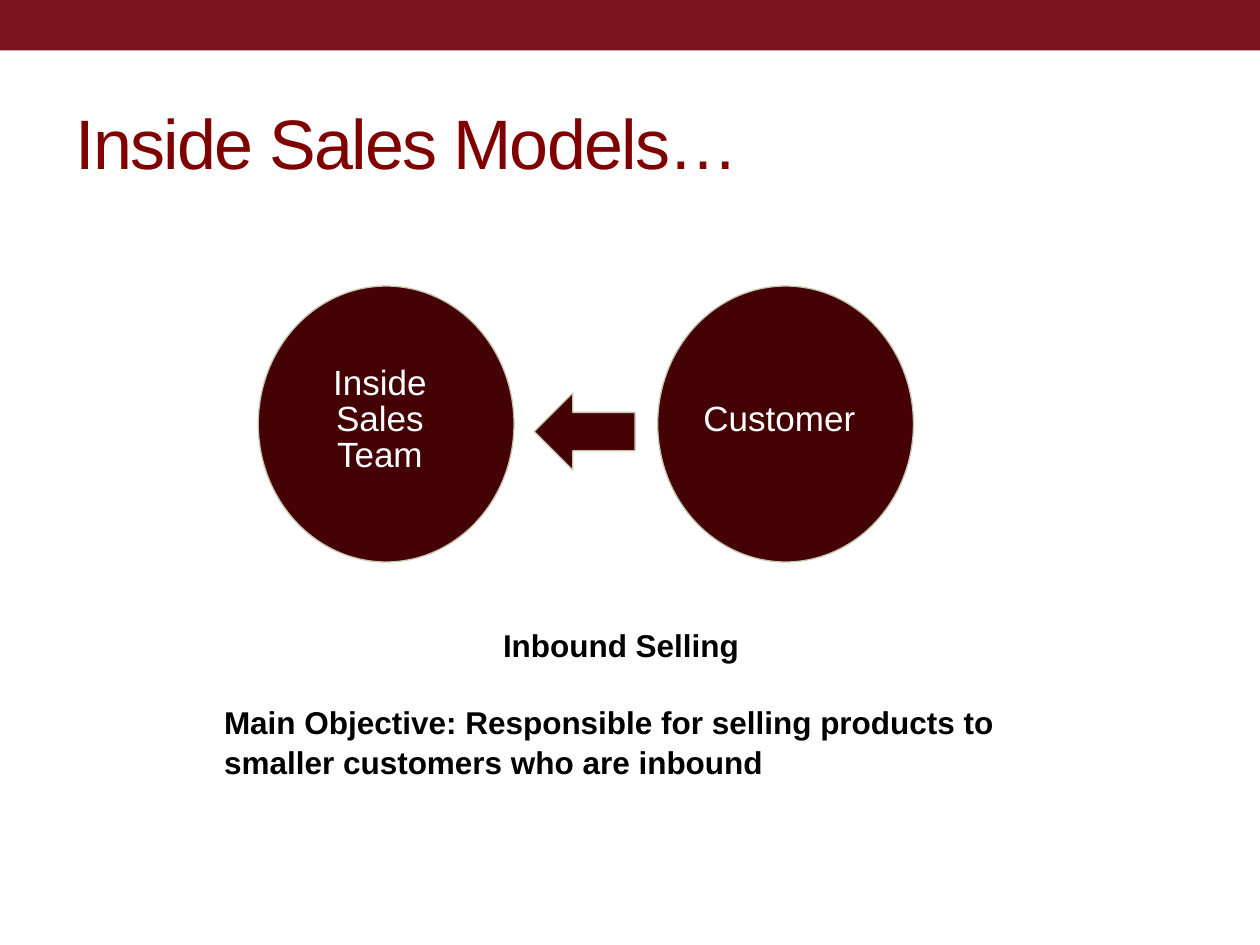
"""Build the inside sales models slide, showing inbound selling."""
from pptx import Presentation
from pptx.dml.color import RGBColor
from pptx.enum.shapes import MSO_SHAPE
from pptx.enum.text import MSO_ANCHOR, PP_ALIGN
from pptx.util import Inches, Pt

RECT, OVAL, ARROW = MSO_SHAPE.RECTANGLE, MSO_SHAPE.OVAL, MSO_SHAPE.RIGHT_ARROW
MIDDLE = MSO_ANCHOR.MIDDLE
LEFT, CENTER = PP_ALIGN.LEFT, PP_ALIGN.CENTER

TITLE = "Inside Sales Models…"
PARTIES = ["Inside Sales Team", "Customer"]
SUMMARY = [
    ("Inbound Selling", CENTER),
    ("Main Objective: Responsible for selling products to smaller customers who are inbound", LEFT),
]

THEME = {
    "font": "Arial",
    "band": "7A141C", "title": "800000", "node": "450205",
    "outline": "C8C8B1", "light": "FFFFFF", "dark": "000000",
    "title_size": 40, "node_size": 20, "body_size": 18,
}
SLIDE_W, SLIDE_H = 10, 7.5
NODE_X, NODE_Y, NODE_W, NODE_H, NODE_STEP = 2.05, 2.27, 2.03, 2.19, 3.17
ARROW_BOX = (4.24, 3.12, 0.8, 0.61)


def color(name):
    return RGBColor.from_string(THEME[name])


def add_shape(s, kind, box, fill, outline=None):
    sp = s.shapes.add_shape(kind, *map(Inches, box))
    sp.shadow.inherit = False
    sp.fill.solid()
    sp.fill.fore_color.rgb = color(fill)
    if outline:
        sp.line.color.rgb = color(outline)
        sp.line.width = Pt(0.75)
    else:
        sp.line.fill.background()
    return sp


def add_run(p, text, role, ink, bold=False):
    r = p.add_run()
    r.text = text
    r.font.name = THEME["font"]
    r.font.size = Pt(THEME[role])
    r.font.bold = bold
    r.font.color.rgb = color(ink)
    return r


def add_title(s):
    sp = s.shapes.title
    sp.left, sp.top, sp.width, sp.height = map(Inches, (0.5, 0.58, 9, 1.08))
    tf = sp.text_frame
    tf.vertical_anchor = MIDDLE
    p = tf.paragraphs[0]
    p.alignment = LEFT
    r = add_run(p, TITLE, "title_size", "title")
    r.font._element.set("spc", "-100")


def add_party(s, index, name):
    box = (NODE_X + index * NODE_STEP, NODE_Y, NODE_W, NODE_H)
    tf = add_shape(s, OVAL, box, "node", "outline").text_frame
    tf.word_wrap = True
    tf.vertical_anchor = MIDDLE
    tf.margin_left = tf.margin_top = 0
    tf.margin_right, tf.margin_bottom = Inches(0.1), Inches(0.05)
    p = tf.paragraphs[0]
    p.alignment = CENTER
    p.line_spacing = 0.86
    add_run(p, name, "node_size", "light")


def add_summary(s):
    tf = s.shapes.add_textbox(*map(Inches, (1.68, 4.91, 6.5, 1.31))).text_frame
    tf.word_wrap = True
    for i, (text, alignment) in enumerate(SUMMARY):
        p = tf.add_paragraph() if i else tf.paragraphs[0]
        p.alignment = alignment
        p.line_spacing = 1.04
        p.space_before = Pt(21.5 if i else 0)
        add_run(p, text, "body_size", "dark", bold=True)


def main():
    prs = Presentation()
    prs.slide_width, prs.slide_height = Inches(SLIDE_W), Inches(SLIDE_H)
    s = prs.slides.add_slide(prs.slide_layouts[5])
    add_shape(s, RECT, (0, 0, SLIDE_W, 0.4), "band")
    add_title(s)
    for i, name in enumerate(PARTIES):
        add_party(s, i, name)
    add_shape(s, ARROW, ARROW_BOX, "node", "outline").rotation = 180
    add_summary(s)
    prs.save("out.pptx")


if __name__ == "__main__":
    main()
